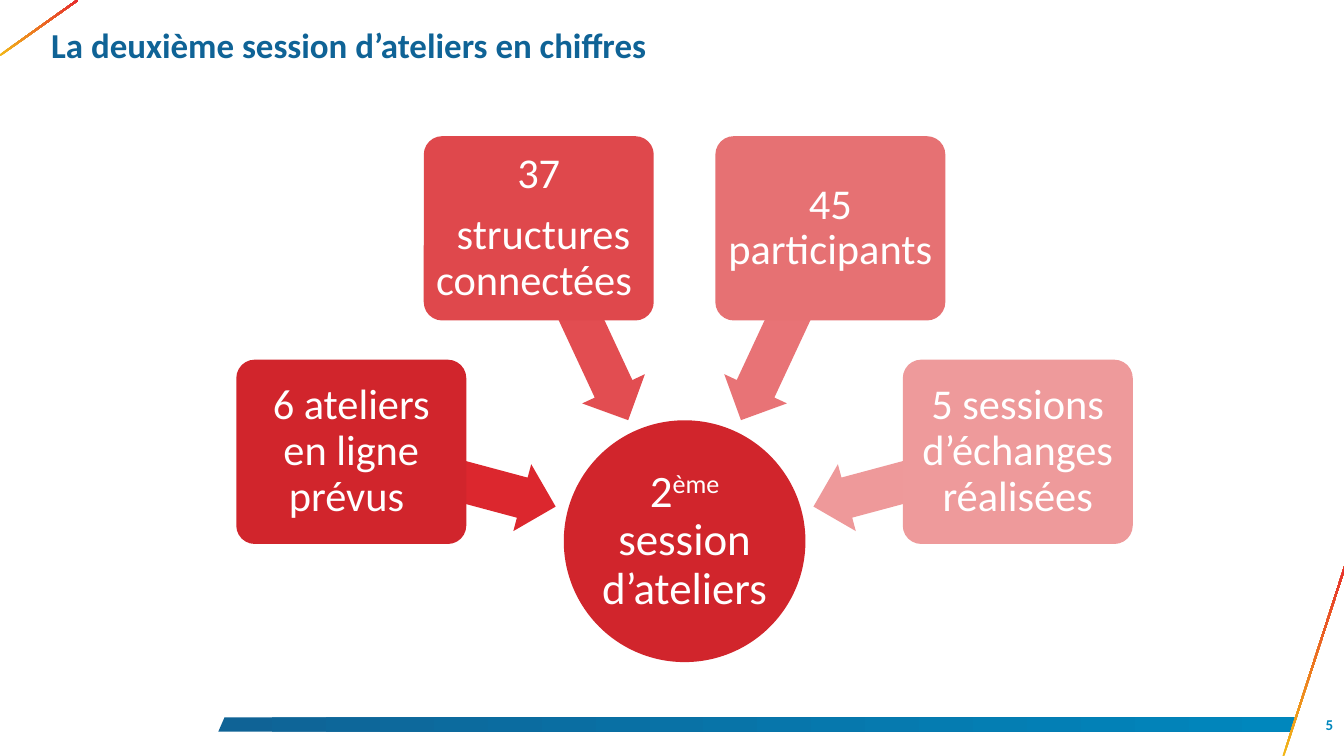
from dataclasses import dataclass
from math import cos, radians, sin

from pptx import Presentation, util as u
from pptx.dml.color import RGBColor
from pptx.enum import shapes, text

FONT = "Calibri"
WHITE = RGBColor(0xFF, 0xFF, 0xFF)
NAVY = RGBColor(0x0F, 0x63, 0x96)
BLUE = RGBColor(0x00, 0x87, 0xBD)
GOLD = RGBColor(0xF2, 0xB8, 0x18)
FLAME = RGBColor(0xE6, 0x29, 0x30)
RED = RGBColor(0xD1, 0x25, 0x2C)

HUB_X, HUB_Y, HUB_SIZE = 7.62, 6.02, 2.69
ARROW_DIST, ARROW_W, ARROW_H = 2.66, 2.35, 0.77
BOX_DIST, BOX_W, BOX_H = 3.84, 2.56, 2.05


@dataclass
class Spoke:
    angle: float
    lines: list[str]
    fill: RGBColor
    arrow: RGBColor


@dataclass
class Stripe:
    x: float
    y: float
    length: float
    angle: float


SPOKES = [
    Spoke(195, ["6 ateliers en ligne prévus "], RED, RGBColor(0xDC, 0x27, 0x2E)),
    Spoke(245, ["37", " structures connectées "],
          RGBColor(0xDF, 0x48, 0x4C), RGBColor(0xE2, 0x4D, 0x51)),
    Spoke(295, ["45 participants"],
          RGBColor(0xE6, 0x71, 0x73), RGBColor(0xE8, 0x73, 0x76)),
    Spoke(345, ["5 sessions d’échanges réalisées"],
          RGBColor(0xEE, 0x9A, 0x9B), RGBColor(0xEE, 0x99, 0x9A)),
]
STRIPES = [Stripe(14.64, 7.32, 2.32, 288), Stripe(0.43, 0.31, 1.06, 324.6)]
BAR = [(2.5, 7.98), (14.43, 7.98), (14.37, 8.14), (2.43, 8.14)]


def add_run(para, words: str, size: float, color: RGBColor, bold: bool = False):
    run = para.add_run()
    run.text = words
    run.font.name = FONT
    run.font.size = u.Pt(size)
    run.font.bold = bold
    run.font.color.rgb = color
    return run


def set_frame(frame, inset: float, anchor) -> None:
    frame.word_wrap = True
    frame.vertical_anchor = anchor
    frame.margin_left = frame.margin_right = u.Inches(inset)
    frame.margin_top = frame.margin_bottom = u.Inches(inset)


def set_para(para) -> None:
    para.alignment = text.PP_ALIGN.CENTER
    para.line_spacing = 0.9


def add_label(slide, box: tuple, words: str, size: float, color: RGBColor,
              inset: float, anchor, align) -> None:
    label = slide.shapes.add_textbox(*map(u.Inches, box))
    set_frame(label.text_frame, inset, anchor)
    para = label.text_frame.paragraphs[0]
    para.alignment = align
    add_run(para, words, size, color, bold=True)


def add_solid(slide, kind, x: float, y: float, width: float, height: float, fill: RGBColor):
    """Add a plain shape centred on x, y."""
    shape = slide.shapes.add_shape(
        kind, *map(u.Inches, (x - width / 2, y - height / 2, width, height)))
    shape.shadow.inherit = False
    shape.fill.solid()
    shape.fill.fore_color.rgb = fill
    shape.line.fill.background()
    return shape


def set_blend(shape, first: RGBColor, last: RGBColor) -> None:
    """Fill the shape with a gradient from left to right."""
    shape.fill.gradient()
    shape.fill.gradient_angle = 0
    for stop, color in zip(shape.fill.gradient_stops, (first, last)):
        stop.color.rgb = color


def add_bar(slide) -> None:
    points = [(u.Inches(x), u.Inches(y)) for x, y in BAR]
    path = slide.shapes.build_freeform(*points[0])
    path.add_line_segments(points[1:], close=True)
    bar = path.convert_to_shape()
    bar.shadow.inherit = False
    bar.line.fill.background()
    set_blend(bar, NAVY, BLUE)


def add_stripe(slide, stripe: Stripe) -> None:
    shape = add_solid(slide, shapes.MSO_SHAPE.RECTANGLE, stripe.x, stripe.y,
                      stripe.length, 0.02, GOLD)
    shape.rotation = stripe.angle
    set_blend(shape, GOLD, FLAME)


def add_hub(slide) -> None:
    hub = add_solid(slide, shapes.MSO_SHAPE.OVAL, HUB_X, HUB_Y, HUB_SIZE, HUB_SIZE, RED)
    set_frame(hub.text_frame, 0.03, text.MSO_ANCHOR.MIDDLE)
    para = hub.text_frame.paragraphs[0]
    set_para(para)
    add_run(para, "2", 36, WHITE)
    raised = add_run(para, "ème", 36, WHITE)
    raised.font._element.set("baseline", "30000")
    add_run(para, " session d’ateliers ", 36, WHITE)


def from_hub(angle: float, dist: float) -> tuple[float, float]:
    turn = radians(angle)
    return HUB_X + dist * cos(turn), HUB_Y + dist * sin(turn)


def add_spoke(slide, spoke: Spoke) -> None:
    """Add a box around the hub and the arrow that leads from it."""
    arrow = add_solid(slide, shapes.MSO_SHAPE.LEFT_ARROW,
                      *from_hub(spoke.angle, ARROW_DIST), ARROW_W, ARROW_H, spoke.arrow)
    arrow.adjustments[0] = 0.6
    arrow.adjustments[1] = 0.5
    arrow.rotation = spoke.angle

    box = add_solid(slide, shapes.MSO_SHAPE.ROUNDED_RECTANGLE,
                    *from_hub(spoke.angle, BOX_DIST), BOX_W, BOX_H, spoke.fill)
    box.adjustments[0] = 0.1
    frame = box.text_frame
    set_frame(frame, 0.07, text.MSO_ANCHOR.MIDDLE)
    for i, line in enumerate(spoke.lines):
        para = frame.add_paragraph() if i else frame.paragraphs[0]
        set_para(para)
        if i:
            para.space_before = u.Pt(12)
        add_run(para, line, 34, WHITE)


def main() -> None:
    deck = Presentation()
    deck.slide_width, deck.slide_height = u.Inches(14.96), u.Inches(8.41)
    slide = deck.slides.add_slide(deck.slide_layouts[6])

    add_bar(slide)
    for stripe in STRIPES:
        add_stripe(slide, stripe)
    add_label(slide, (0.53, 0.22, 13.9, 0.9), "La deuxième session d’ateliers en chiffres",
              28, NAVY, 0.04, text.MSO_ANCHOR.TOP, text.PP_ALIGN.LEFT)
    add_hub(slide)
    for spoke in SPOKES:
        add_spoke(slide, spoke)
    add_label(slide, (14.27, 7.94, 0.57, 0.23), "5",
              12, BLUE, 0, text.MSO_ANCHOR.MIDDLE, text.PP_ALIGN.RIGHT)
    deck.save("out.pptx")


if __name__ == "__main__":
    main()
